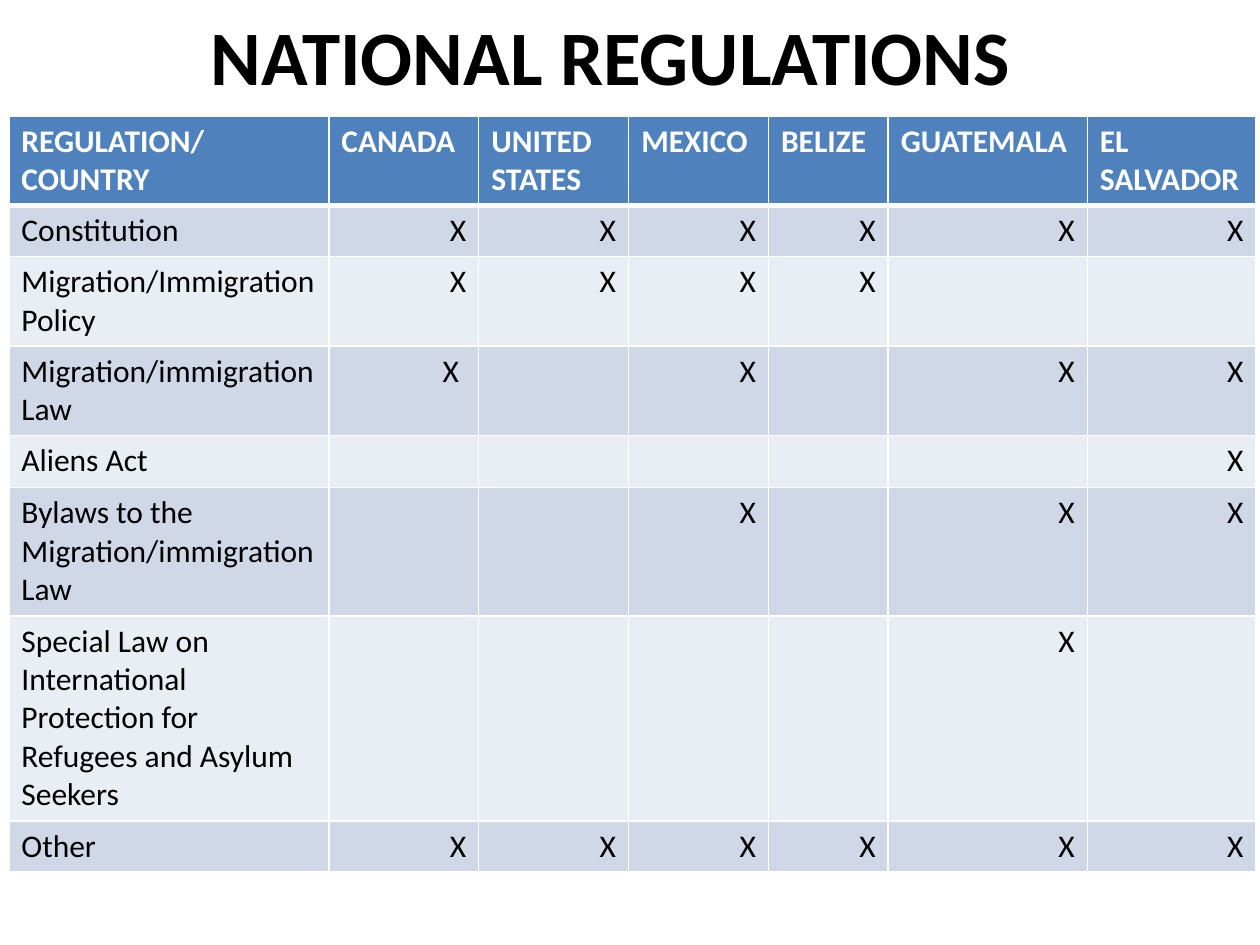
from lxml.etree import SubElement
from pptx import Presentation
from pptx.dml.color import RGBColor as RGB
from pptx.enum.text import MSO_ANCHOR as Anchor, PP_ALIGN as Align
from pptx.oxml.ns import qn
from pptx.util import Inches, Pt

COLORS = {"header": "4F81BD", "odd": "D0D8E8", "even": "E9EDF4",
          "white": "FFFFFF", "black": "000000"}
FONT = "Calibri"
COUNTRIES = ["CANADA", "UNITED STATES", "MEXICO", "BELIZE", "GUATEMALA",
             "EL SALVADOR"]
# Regulation, marks by country, row height in inches
REGULATIONS = [
    ("Constitution", ["X"] * 6, 0.4),
    ("Migration/Immigration Policy", ["X"] * 4 + [""] * 2, 0.71),
    ("Migration/immigration Law", ["X ", "", "X", "", "X", "X"], 0.71),
    ("Aliens Act", [""] * 5 + ["X"], 0.41),
    ("Bylaws to the Migration/immigration Law",
     ["", "", "X", "", "X", "X"], 1.02),
    ("Special Law on International Protection for Refugees and Asylum Seekers",
     [""] * 4 + ["X", ""], 1.63),
    ("Other", ["X"] * 6, 0.4),
]
HEADER_HEIGHT = 0.71
COLUMN_WIDTHS = [2.54, 1.19, 1.19, 1.11, 0.95, 1.58, 1.34]


def style_font(paragraph, size, color, bold):
    font = paragraph.font
    font.name, font.size, font.bold = FONT, Pt(size), bold
    font.color.rgb = RGB.from_string(COLORS[color])


def add_title(slide, left, top, width, height):
    title = slide.shapes.title
    title.left, title.top, title.width, title.height = map(
        Inches, (left, top, width, height))
    frame = title.text_frame
    frame.text = "NATIONAL REGULATIONS"
    frame.vertical_anchor = Anchor.MIDDLE
    heading = frame.paragraphs[0]
    heading.alignment = Align.CENTER
    style_font(heading, 44, "black", True)


def set_borders(cell, bottom):
    """White rules round a cell; must come before its fill."""
    properties = cell._tc.get_or_add_tcPr()
    for side, points in (("L", 1), ("R", 1), ("T", 1), ("B", bottom)):
        line = SubElement(properties, qn(f"a:ln{side}"), w=str(Pt(points)))
        fill = SubElement(line, qn("a:solidFill"))
        SubElement(fill, qn("a:srgbClr"), val=COLORS["white"])


def fill_cell(cell, text, background, is_header, align):
    set_borders(cell, 3 if is_header else 1)
    cell.fill.solid()
    cell.fill.fore_color.rgb = RGB.from_string(COLORS[background])
    cell.text = text
    entry = cell.text_frame.paragraphs[0]
    entry.alignment = align
    style_font(entry, 18, "white" if is_header else "black", is_header)


def add_regulations(slide, left, top):
    rows = [["REGULATION/COUNTRY", *COUNTRIES]]
    rows += [[name, *marks] for name, marks, _ in REGULATIONS]
    heights = [HEADER_HEIGHT] + [height for *_, height in REGULATIONS]
    table = slide.shapes.add_table(
        len(rows), len(COLUMN_WIDTHS), Inches(left), Inches(top),
        Inches(sum(COLUMN_WIDTHS)), Inches(sum(heights))).table
    for column, width in zip(table.columns, COLUMN_WIDTHS):
        column.width = Inches(width)
    for r, (texts, height) in enumerate(zip(rows, heights)):
        table.rows[r].height = Inches(height)
        is_header = r == 0
        background = "header" if is_header else "odd" if r % 2 else "even"
        for c, text in enumerate(texts):
            align = Align.LEFT if is_header or c == 0 else Align.RIGHT
            fill_cell(table.cell(r, c), text, background, is_header, align)


def main():
    deck = Presentation()
    deck.slide_width, deck.slide_height = Inches(10), Inches(7.5)
    slide = deck.slides.add_slide(deck.slide_layouts[5])
    add_title(slide, 0.35, -0.19, 9, 1.25)
    add_regulations(slide, 0.07, 0.92)
    deck.save("out.pptx")


if __name__ == "__main__":
    main()
